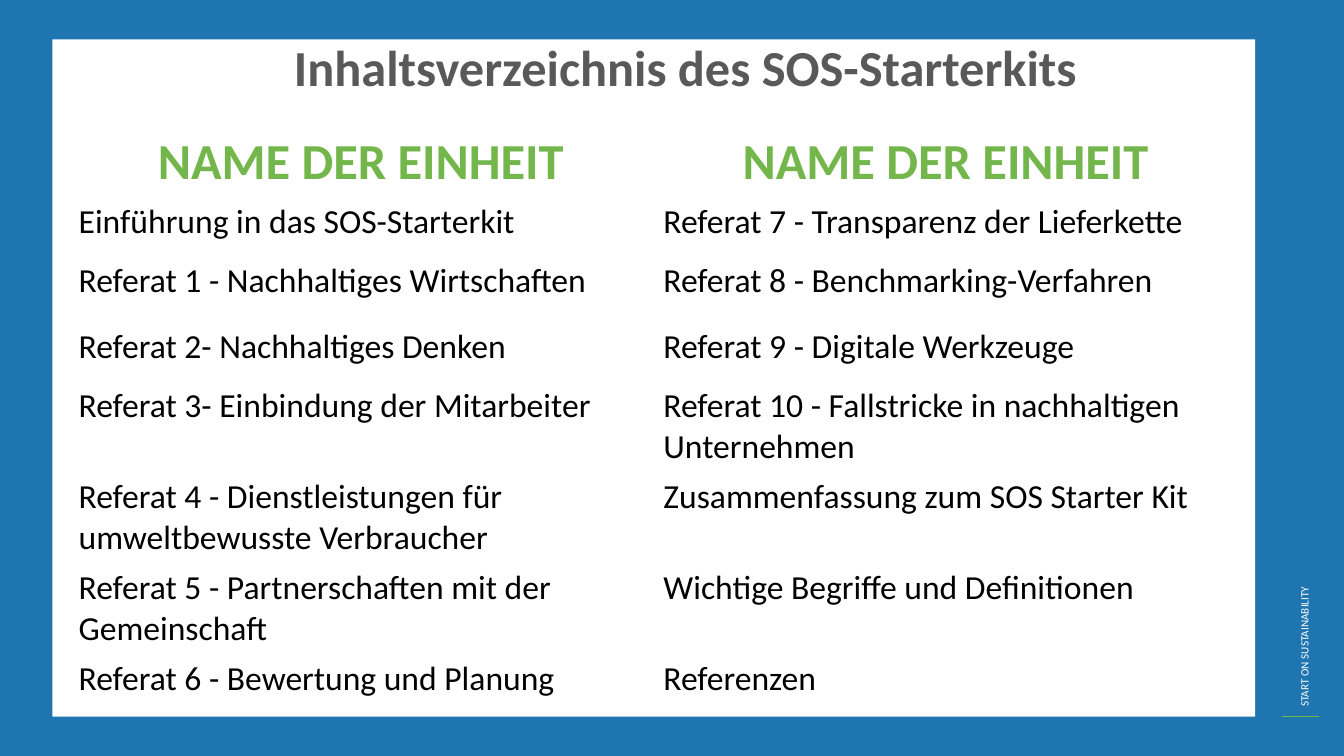
"""Build the table-of-contents slide of the SOS starter kit."""
from lxml.etree import SubElement
from pptx import Presentation
from pptx.dml.color import RGBColor
from pptx.enum.shapes import MSO_CONNECTOR, MSO_SHAPE
from pptx.enum.text import MSO_ANCHOR, MSO_AUTO_SIZE, PP_ALIGN
from pptx.oxml.ns import qn
from pptx.util import Inches, Pt

BLUE = RGBColor(0x1E, 0x75, 0xB0)
GREEN = RGBColor(0x73, 0xB6, 0x4B)
GREY = RGBColor(0x59, 0x59, 0x59)
BLACK = RGBColor(0x01, 0x01, 0x01)
WHITE = RGBColor(0xFF, 0xFF, 0xFF)

CONTENTS = [
    ("NAME DER EINHEIT", "NAME DER EINHEIT"),
    ("Einführung in das SOS-Starterkit", "Referat 7 - Transparenz der Lieferkette"),
    ("Referat 1 - Nachhaltiges Wirtschaften", "Referat 8 - Benchmarking-Verfahren"),
    ("Referat 2- Nachhaltiges Denken", "Referat 9 - Digitale Werkzeuge"),
    ("Referat 3- Einbindung der Mitarbeiter",
     "Referat 10 - Fallstricke in nachhaltigen Unternehmen"),
    ("Referat 4 - Dienstleistungen für umweltbewusste Verbraucher",
     "Zusammenfassung zum SOS Starter Kit"),
    ("Referat 5 - Partnerschaften mit der Gemeinschaft",
     "Wichtige Begriffe und Definitionen"),
    ("Referat 6 - Bewertung und Planung", "Referenzen"),
]
ROW_HEIGHTS = [0.59, 0.59, 0.65, 0.59, 0.63, 0.59, 0.59, 0.59]
COLUMN_WIDTH = 5.8


def box(left, top, width, height):
    return [Inches(length) for length in (left, top, width, height)]


def write(frame, text, size, color, bold=False, align=PP_ALIGN.LEFT):
    frame.text = text
    paragraph = frame.paragraphs[0]
    paragraph.alignment = align
    font = paragraph.runs[0].font
    font.name, font.size, font.bold = "Calibri", Pt(size), bold
    font.color.rgb = color


prs = Presentation()
prs.slide_width, prs.slide_height = Inches(13.33), Inches(7.5)
slide = prs.slides.add_slide(prs.slide_layouts[5])
slide.background.fill.solid()
slide.background.fill.fore_color.rgb = BLUE

panel = slide.shapes.add_shape(MSO_SHAPE.RECTANGLE, *box(0.52, 0.39, 11.93, 6.72))
panel.shadow.inherit = False
panel.fill.solid()
panel.fill.fore_color.rgb = WHITE
panel.line.fill.background()
slide.shapes.element.insert(2, panel.element)

motto = slide.shapes.add_textbox(*box(10.71, 4.76, 4.46, 0.24))
motto.rotation = 270
motto.text_frame.word_wrap = True
write(motto.text_frame, "START ON SUSTAINABILITY", 8, WHITE)

motto_rule = slide.shapes.add_connector(
    MSO_CONNECTOR.STRAIGHT, Inches(12.72), Inches(7.11), Inches(13.08), Inches(7.11))
motto_rule.line.color.rgb = GREEN
motto_rule.line.width = Pt(1)
SubElement(motto_rule.element.spPr, qn("a:effectLst"))

title = slide.shapes.title
title.left, title.top, title.width, title.height = box(1.33, 0.38, 10.94, 0.88)
title.text_frame.auto_size = MSO_AUTO_SIZE.NONE
title.text_frame.vertical_anchor = MSO_ANCHOR.TOP
write(title.text_frame, "Inhaltsverzeichnis des SOS-Starterkits", 36, GREY, True, PP_ALIGN.CENTER)
title.text_frame.paragraphs[0].line_spacing = 0.9

contents = slide.shapes.add_table(
    len(CONTENTS), 2, *box(0.68, 1.25, 2 * COLUMN_WIDTH, sum(ROW_HEIGHTS))).table
contents.first_row = contents.horz_banding = False
for column in contents.columns:
    column.width = Inches(COLUMN_WIDTH)
for r, (units, height) in enumerate(zip(CONTENTS, ROW_HEIGHTS)):
    contents.rows[r].height = Inches(height)
    for c, unit in enumerate(units):
        cell = contents.cell(r, c)
        cell.fill.background()
        if r == 0:
            write(cell.text_frame, unit, 36, GREEN, True, PP_ALIGN.CENTER)
        else:
            write(cell.text_frame, unit, 24, BLACK)

prs.save("out.pptx")
